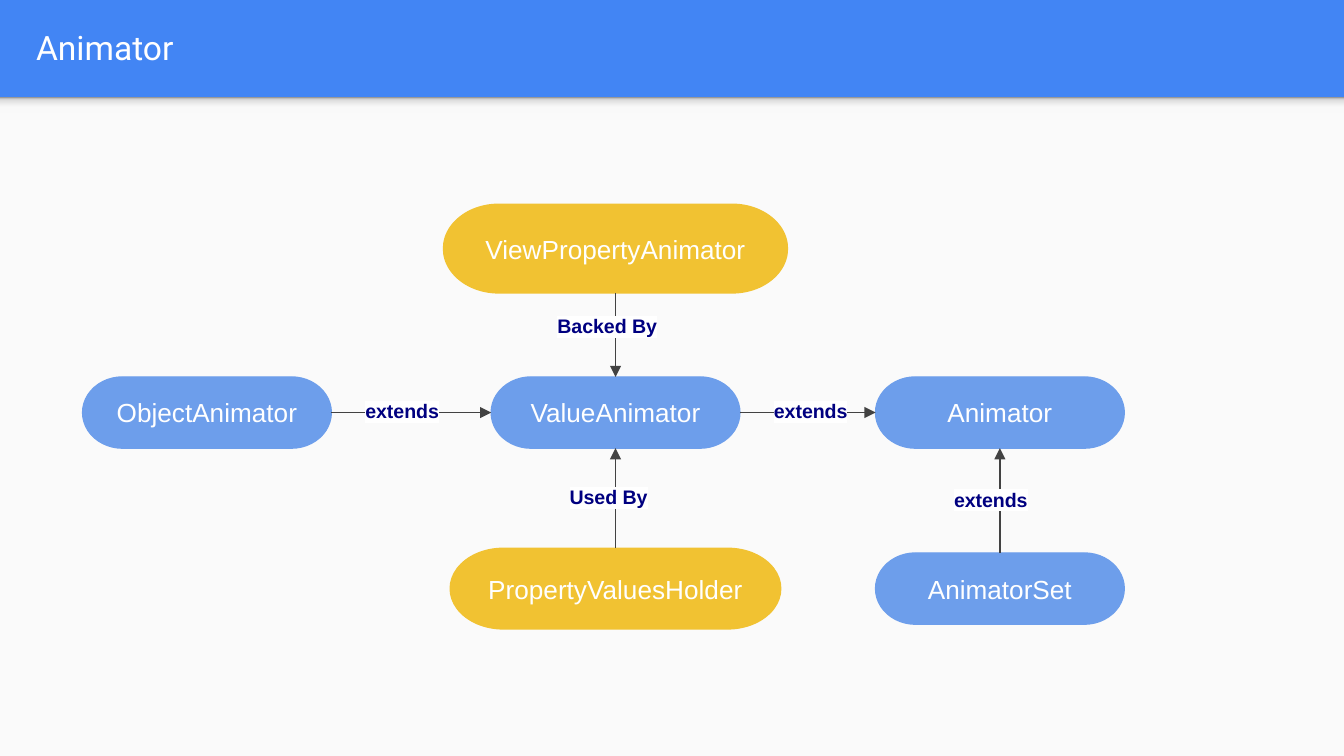
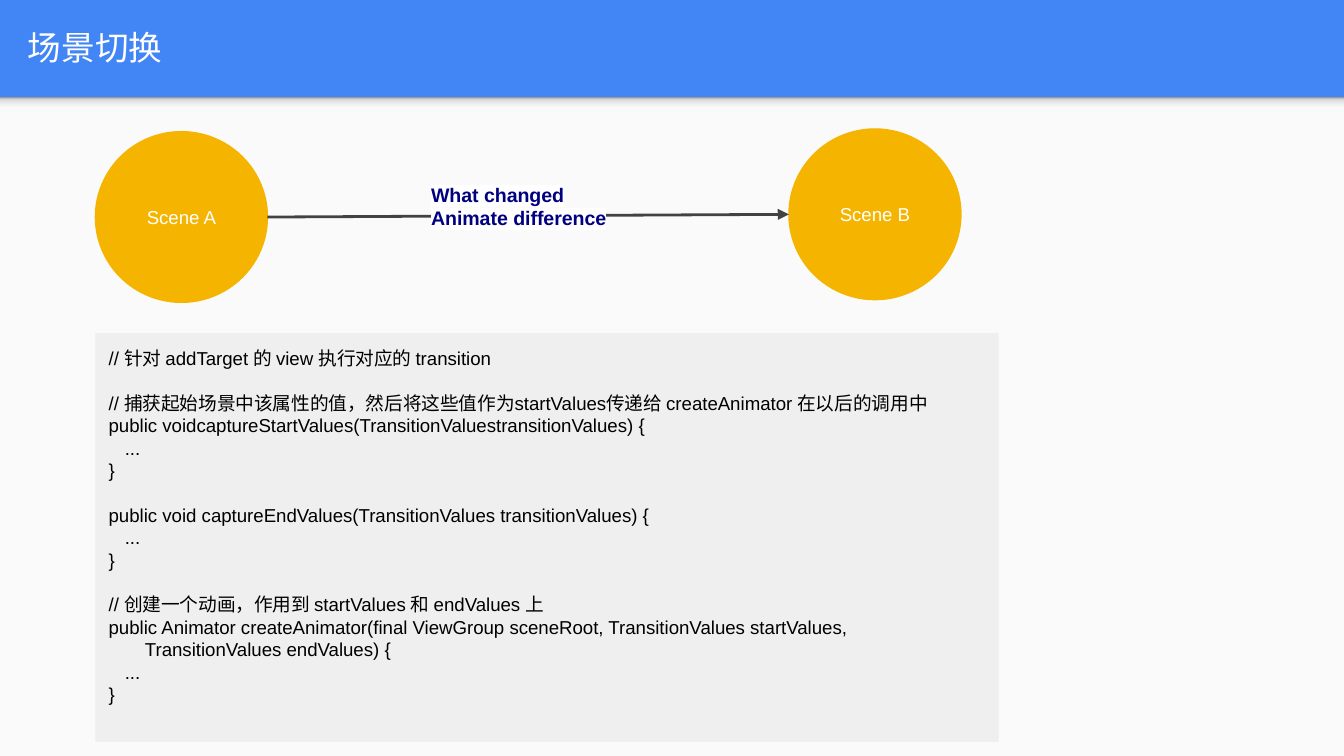
from dataclasses import dataclass
from typing import NamedTuple

from lxml import etree
from pptx import Presentation
from pptx.dml.color import RGBColor
from pptx.enum.shapes import MSO_CONNECTOR, MSO_SHAPE
from pptx.enum.text import MSO_ANCHOR, PP_ALIGN
from pptx.oxml.ns import qn
from pptx.util import Inches, Pt

RECT, OVAL = MSO_SHAPE.RECTANGLE, MSO_SHAPE.OVAL
PILL = MSO_SHAPE.FLOWCHART_TERMINATOR
STRAIGHT = MSO_CONNECTOR.STRAIGHT
LEFT, CENTER = PP_ALIGN.LEFT, PP_ALIGN.CENTER
TOP, MIDDLE = MSO_ANCHOR.TOP, MSO_ANCHOR.MIDDLE
# Connection sites of a box
NORTH, WEST, SOUTH, EAST = range(4)


@dataclass(frozen=True)
class Theme:
    band: str = "4285F4"
    page: str = "FAFAFA"
    white: str = "FFFFFF"
    black: str = "000000"
    blue: str = "6D9EEB"
    gold: str = "F1C232"
    amber: str = "F4B400"
    code: str = "EFEFEF"
    line: str = "424242"
    navy: str = "000080"
    shade: tuple = ((0, "F9F9F9"), (36, "F9F9F9"), (80, "DEDEDE"), (100, "999999"))
    head: str = "Roboto"
    body: str = "Arial"
    title_size: float = 18
    node_size: float = 14
    label_size: float = 10.5
    small_size: float = 10


THEME = Theme()


class Box(NamedTuple):
    x: float
    y: float
    w: float
    h: float


class Node(NamedTuple):
    name: str
    x: float  # centre
    y: float  # centre
    w: float = 1.85
    h: float = 0.53
    fill: str = THEME.blue


class Link(NamedTuple):
    start: str
    out: int
    end: str
    into: int
    text: str
    label: Box


class Line(NamedTuple):
    text: str
    indent: float = 0
    gap: float = 0


def color(code: str) -> RGBColor:
    return RGBColor.from_string(code)


def write(shape, *lines: Line, size: float, tint: str, font: str = THEME.body,
          bold: bool = False, align=LEFT, anchor=TOP, mark: str = "") -> None:
    """Fill a shape with paragraphs in one format."""
    frame = shape.text_frame
    frame.word_wrap = True
    frame.vertical_anchor = anchor
    frame.margin_left = frame.margin_right = Inches(0.1)
    frame.margin_top = frame.margin_bottom = Inches(0.1)
    for i, line in enumerate(lines):
        para = frame.add_paragraph() if i else frame.paragraphs[0]
        para.alignment = align
        para.space_before = Pt(line.gap)
        if line.indent:
            props = para._p.get_or_add_pPr()
            props.set("marL", str(Inches(line.indent)))
            props.set("indent", "0")
        run = para.add_run()
        run.text = line.text
        run.font.size, run.font.bold, run.font.name = Pt(size), bold, font
        run.font.color.rgb = color(tint)
        if mark:
            glow = etree.Element(qn("a:highlight"))
            etree.SubElement(glow, qn("a:srgbClr"), val=mark)
            run._r.get_or_add_rPr().find(qn("a:solidFill")).addnext(glow)


def draw(slide, kind, box: Box, fill: str, edge: str = ""):
    """Add a preset shape with a flat fill."""
    shape = slide.shapes.add_shape(kind, *map(Inches, box))
    shape.shadow.inherit = False
    shape.fill.solid()
    shape.fill.fore_color.rgb = color(fill)
    if edge:
        shape.line.color.rgb = color(edge)
        shape.line.width = Pt(0.75)
    else:
        shape.line.fill.background()
    return shape


def bubble(slide, kind, box: Box, name: str, fill: str, size: float):
    shape = draw(slide, kind, box, fill, fill)
    write(shape, Line(name), size=size, tint=THEME.white, align=CENTER, anchor=MIDDLE)
    return shape


def arrow(slide, x1: int, y1: int, x2: int, y2: int, width: float = 0.75):
    wire = slide.shapes.add_connector(STRAIGHT, x1, y1, x2, y2)
    wire.line.color.rgb = color(THEME.line)
    wire.line.width = Pt(width)
    etree.SubElement(wire.line._get_or_add_ln(), qn("a:tailEnd"), type="triangle")
    etree.SubElement(wire._element.spPr, qn("a:effectLst"))
    return wire


def label(slide, box: Box, *rows: str) -> None:
    area = slide.shapes.add_textbox(*map(Inches, box))
    write(area, *map(Line, rows), size=THEME.label_size, tint=THEME.navy,
          bold=True, mark=THEME.white)


def start(deck, title: Line):
    """Add a slide with the blue band, its shade and the title."""
    slide = deck.slides.add_slide(deck.slide_layouts[6])
    back = slide.background.fill
    back.solid()
    back.fore_color.rgb = color(THEME.band)
    draw(slide, RECT, Box(0, 0.73, 10, 4.9), THEME.page)
    shade = draw(slide, RECT, Box(0, 0.72, 10, 0.12), THEME.page)
    shade.fill.gradient()
    shade.fill.gradient_angle = 90
    stops = shade._element.spPr.find(qn("a:gradFill")).find(qn("a:gsLst"))
    stops.clear()
    for spot, tint in THEME.shade:
        stop = etree.SubElement(stops, qn("a:gs"), pos=str(spot * 1000))
        etree.SubElement(stop, qn("a:srgbClr"), val=tint)
    area = slide.shapes.add_textbox(*map(Inches, Box(0.11, 0.02, 9.65, 0.66)))
    write(area, title, size=THEME.title_size, tint=THEME.white, font=THEME.head,
          anchor=MIDDLE)
    return slide


# Class diagram: columns and rows of node centres
COL_A, COL_B, COL_C = 1.54, 4.58, 7.44
ROW_A, ROW_B, ROW_C = 1.85, 3.07, 4.38

NODES = (
    Node("ObjectAnimator", COL_A, ROW_B),
    Node("ValueAnimator", COL_B, ROW_B),
    Node("Animator", COL_C, ROW_B),
    Node("PropertyValuesHolder", COL_B, ROW_C, 2.46, 0.6, THEME.gold),
    Node("ViewPropertyAnimator", COL_B, ROW_A, 2.56, 0.66, THEME.gold),
    Node("AnimatorSet", COL_C, ROW_C),
)
LINKS = (
    Link("ObjectAnimator", EAST, "ValueAnimator", WEST, "extends",
         Box(2.62, 2.88, 0.88, 0.39)),
    Link("PropertyValuesHolder", NORTH, "ValueAnimator", SOUTH, "Used By",
         Box(4.14, 3.52, 0.88, 0.39)),
    Link("ViewPropertyAnimator", SOUTH, "ValueAnimator", NORTH, "Backed By",
         Box(4.05, 2.25, 1.06, 0.39)),
    Link("ValueAnimator", EAST, "Animator", WEST, "extends",
         Box(5.66, 2.88, 0.88, 0.39)),
    Link("AnimatorSet", NORTH, "Animator", SOUTH, "extends",
         Box(7, 3.54, 0.88, 0.39)),
)

# Code listing: a gap stands for a line left open
GAP, STEP, WRAP = 12, 0.12, 0.27
CODE = (
    Line("// 针对 addTarget 的 view 执行对应的 transition"),
    Line("// 捕获起始场景中该属性的值，然后将这些值作为startValues传递给 createAnimator 在以后的调用中", gap=GAP),
    Line("public voidcaptureStartValues(TransitionValuestransitionValues) {"),
    Line("...", STEP),
    Line("}"),
    Line("public void captureEndValues(TransitionValues transitionValues) {", gap=GAP),
    Line("...", STEP),
    Line("}"),
    Line("// 创建一个动画，作用到 startValues 和 endValues 上", gap=GAP),
    Line("public Animator createAnimator(final ViewGroup sceneRoot, TransitionValues startValues,"),
    Line("TransitionValues endValues) {", WRAP),
    Line("...", STEP),
    Line("}"),
)


def classes(deck) -> None:
    slide = start(deck, Line("Animator", indent=0.06))
    pills = {}
    for node in NODES:
        box = Box(node.x - node.w / 2, node.y - node.h / 2, node.w, node.h)
        pills[node.name] = bubble(slide, PILL, box, node.name, node.fill,
                                  THEME.node_size)
    for link in LINKS:
        wire = arrow(slide, 0, 0, 0, 0)
        wire.begin_connect(pills[link.start], link.out)
        wire.end_connect(pills[link.end], link.into)
        label(slide, link.label, link.text)


def scenes(deck) -> None:
    slide = start(deck, Line("场景切换"))
    first, last = (
        bubble(slide, OVAL, Box(x, y, 1.28, 1.27), name, THEME.amber, THEME.small_size)
        for name, x, y in (("Scene A", 0.71, 0.98), ("Scene B", 5.87, 0.96))
    )
    panel = draw(slide, RECT, Box(0.71, 2.48, 6.72, 3.04), THEME.code)
    write(panel, *CODE, size=THEME.small_size, tint=THEME.black)
    arrow(slide, first.left + first.width, first.top + first.height // 2,
          last.left, last.top + last.height // 2, width=1.5)
    label(slide, Box(3.11, 1.26, 1.64, 0.58), "What changed", "Animate difference")


def main() -> None:
    deck = Presentation()
    # Widescreen, 16 to 9
    deck.slide_width = Inches(10)
    deck.slide_height = deck.slide_width * 9 // 16
    classes(deck)
    scenes(deck)
    deck.save("out.pptx")


if __name__ == "__main__":
    main()
